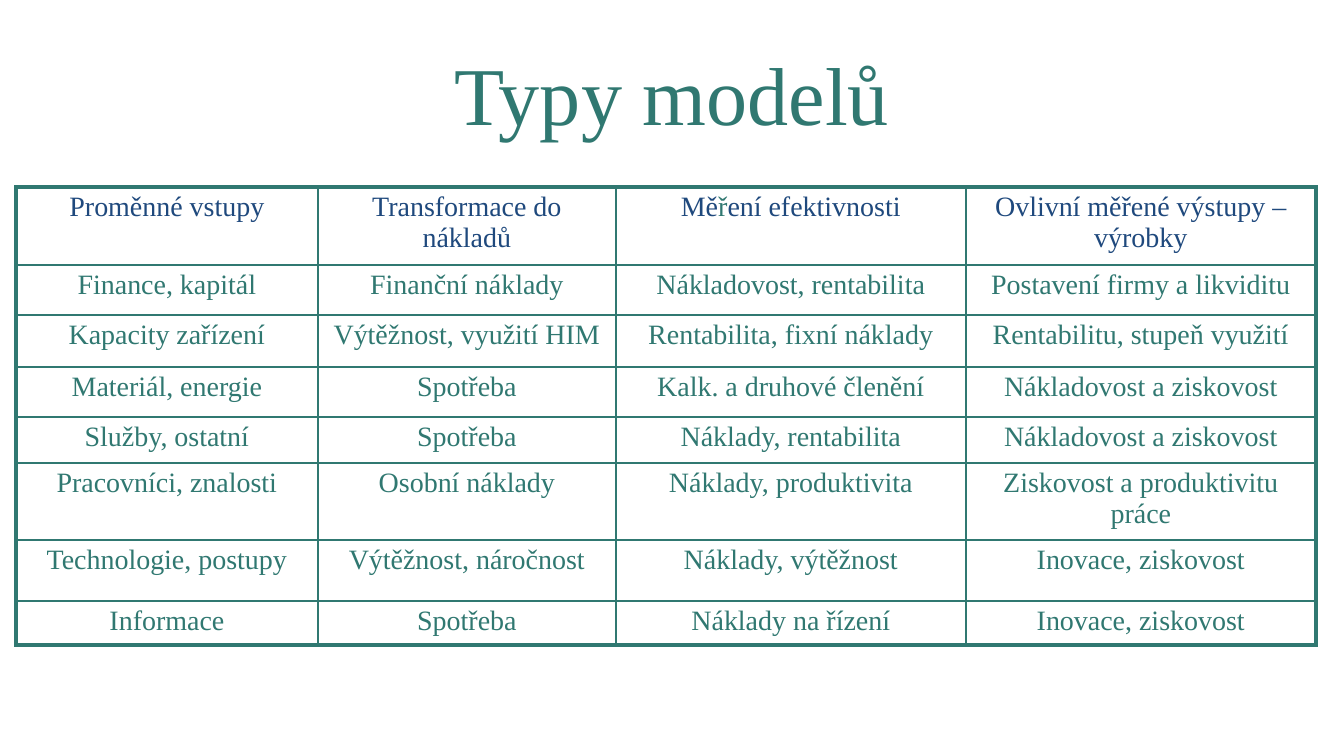
from dataclasses import dataclass

from lxml import etree
from pptx import Presentation
from pptx.dml.color import RGBColor
from pptx.enum.text import MSO_ANCHOR, PP_ALIGN
from pptx.oxml.ns import qn
from pptx.util import Emu, Pt

CENTER = PP_ALIGN.CENTER
MIDDLE = MSO_ANCHOR.MIDDLE
TOP = MSO_ANCHOR.TOP
PAGE_WIDTH, PAGE_HEIGHT = 1344, 756
SCALE = 9144000 / PAGE_WIDTH


@dataclass(frozen=True)
class Theme:
    """Colours, type sizes and line widths of the slide."""
    font: str = "Times New Roman"
    green: str = "307871"
    navy: str = "1F497D"
    title_size: int = 44
    cell_size: int = 15
    thin: float = 1
    thick: float = 2.25


THEME = Theme()
TITLE = "Typy modelů"
COLUMN_WIDTHS = [302, 298, 350, 350]
ROW_HEIGHTS = [78, 50, 52, 50, 46, 73, 61, 44]
HEADER = [
    "Proměnné vstupy",
    "Transformace do nákladů",
    [("Mě", THEME.navy), ("ř", THEME.green), ("ení efektivnosti", THEME.navy)],
    "Ovlivní měřené výstupy – výrobky",
]
BODY = [
    ["Finance, kapitál", "Finanční náklady", "Nákladovost, rentabilita", "Postavení firmy a likviditu"],
    ["Kapacity zařízení", "Výtěžnost, využití HIM", "Rentabilita, fixní náklady", "Rentabilitu, stupeň využití"],
    ["Materiál, energie", "Spotřeba", "Kalk. a druhové členění", "Nákladovost a ziskovost"],
    ["Služby, ostatní", "Spotřeba", "Náklady, rentabilita", "Nákladovost a ziskovost"],
    ["Pracovníci, znalosti", "Osobní náklady", "Náklady, produktivita", "Ziskovost a produktivitu práce"],
    ["Technologie, postupy", "Výtěžnost, náročnost", "Náklady, výtěžnost", "Inovace, ziskovost"],
    ["Informace", "Spotřeba", "Náklady na řízení", "Inovace, ziskovost"],
]


def px(length):
    """Turn a length in px into EMU."""
    return Emu(round(length * SCALE))


def write_text(frame, text, size, color, align=CENTER, anchor=TOP):
    """Write a string, or a list of (text, colour) spans, as one paragraph."""
    frame.word_wrap = True
    frame.vertical_anchor = anchor
    para = frame.paragraphs[0]
    para.alignment = align
    spans = [(text, color)] if isinstance(text, str) else text
    for content, span_color in spans:
        span = para.add_run()
        span.text = content
        span.font.name = THEME.font
        span.font.size = Pt(size)
        span.font.color.rgb = RGBColor.from_string(span_color)


def set_borders(cell, widths):
    """Draw the left, right, top and bottom borders of a cell."""
    properties = cell._tc.get_or_add_tcPr()
    for side, width in zip("LRTB", widths):
        line = etree.SubElement(properties, qn(f"a:ln{side}"), w=str(Pt(width)))
        fill = etree.SubElement(line, qn("a:solidFill"))
        etree.SubElement(fill, qn("a:srgbClr"), val=THEME.green)


def add_title(page, left, top, width, height):
    """Place the title in the given box."""
    box = page.shapes.add_textbox(px(left), px(top), px(width), px(height))
    write_text(box.text_frame, TITLE, THEME.title_size, THEME.green, anchor=MIDDLE)


def add_model_table(page, left, top):
    """Place the table of models with its top left corner at the given point."""
    rows = [HEADER] + BODY
    last_row, last_column = len(rows) - 1, len(HEADER) - 1
    table = page.shapes.add_table(
        len(rows), len(HEADER), px(left), px(top),
        px(sum(COLUMN_WIDTHS)), px(sum(ROW_HEIGHTS))).table
    table.first_row = False
    table.horz_banding = False
    for column, width in zip(table.columns, COLUMN_WIDTHS):
        column.width = px(width)
    for row, height in zip(table.rows, ROW_HEIGHTS):
        row.height = px(height)
    for r, texts in enumerate(rows):
        color = THEME.green if r else THEME.navy
        for c, text in enumerate(texts):
            cell = table.cell(r, c)
            cell.margin_left = cell.margin_right = px(13)
            cell.margin_top = cell.margin_bottom = px(5)
            outer = (c == 0, c == last_column, r == 0, r == last_row)
            set_borders(cell, [THEME.thick if edge else THEME.thin for edge in outer])
            cell.fill.background()
            write_text(cell.text_frame, text, THEME.cell_size, color)


def main():
    """Build the deck and save it."""
    deck = Presentation()
    deck.slide_width, deck.slide_height = px(PAGE_WIDTH), px(PAGE_HEIGHT)
    page = deck.slides.add_slide(deck.slide_layouts[6])
    add_title(page, 101, 26, 1142, 134)
    add_model_table(page, 16, 187)
    deck.save("out.pptx")


if __name__ == "__main__":
    main()
